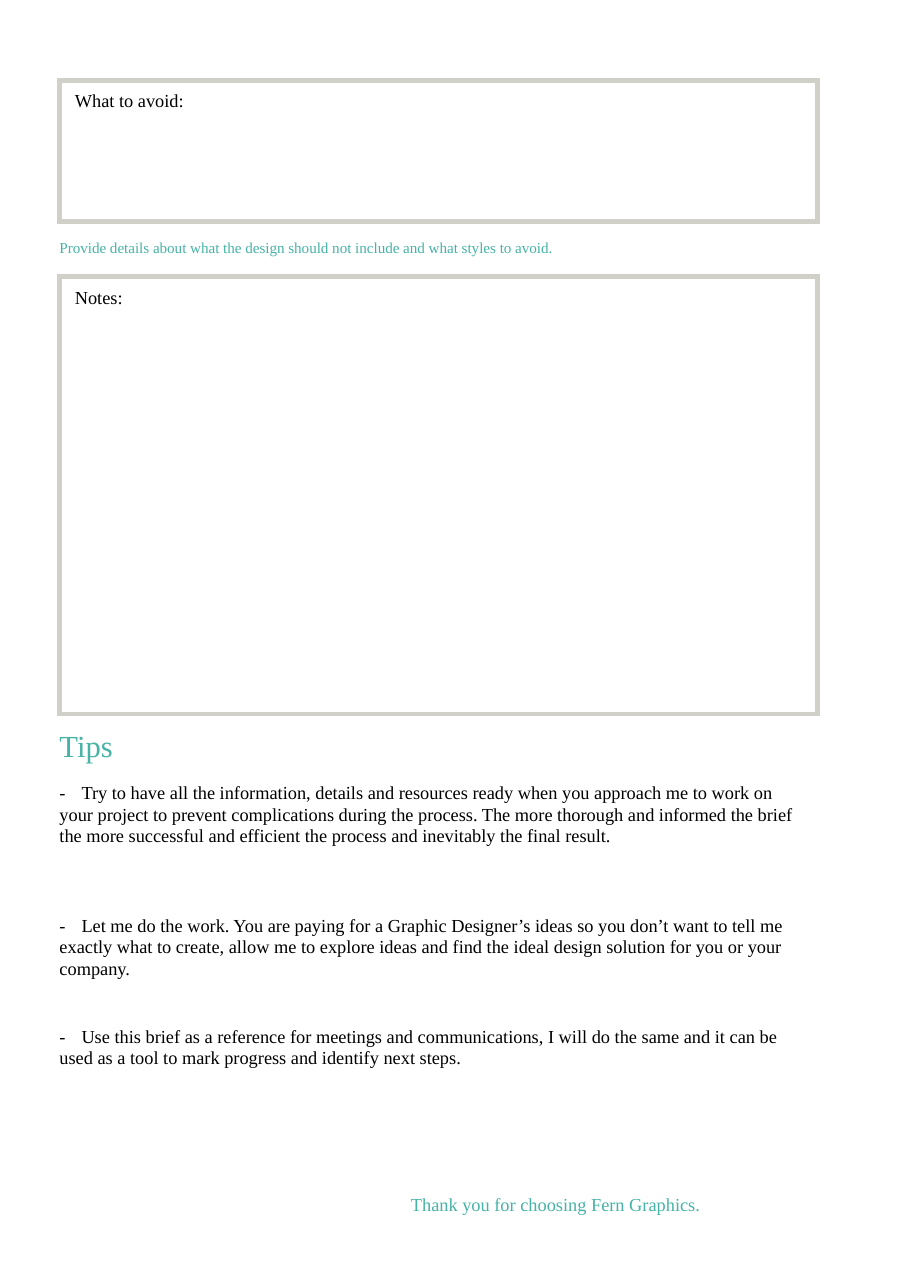
"""Build the closing page of a design brief: two answer boxes, tips and thanks."""
import pptx
import pptx.dml.color
import pptx.enum.shapes
import pptx.enum.text
import pptx.oxml.ns
import pptx.util
from lxml import etree

Inches, Pt = pptx.util.Inches, pptx.util.Pt
TEAL = pptx.dml.color.RGBColor(0x46, 0xB3, 0xA6)
GRAY = pptx.dml.color.RGBColor(0xD0, 0xD0, 0xC8)
BLACK = pptx.dml.color.RGBColor(0, 0, 0)
FONT = "Times New Roman"

TEXT_LEFT, TEXT_RIGHT = 0.54, 7.28
FRAME_LEFT, FRAME_RIGHT = 0.54, 7.42
OVERLAP = 0.02
LABEL_INDENT, LABEL_DROP = 0.14, 0.09
TAB_STOP = 0.2

FRAMES = [
    ("What to avoid:", 0.73, 2.01),
    ("Notes:", 2.51, 6.48),
]
LINES = [
    ("Provide details about what the design should not include and what styles to avoid.",
     TEXT_LEFT, 2.16, 9.9, 11.2),
    ("Tips", TEXT_LEFT, 6.62, 20, 21.4),
    ("Thank you for choosing Fern Graphics.", 3.73, 10.84, 12, 13.2),
]
TIPS = [
    ("Try to have all the information, details and resources ready when you approach me "
     "to work on your project to prevent complications during the process. The more "
     "thorough and informed the brief the more successful and efficient the process and "
     "inevitably the final result.", 7.09, 3),
    ("Let me do the work. You are paying for a Graphic Designer’s ideas so you don’t want "
     "to tell me exactly what to create, allow me to explore ideas and find the ideal "
     "design solution for you or your company.", 8.29, 3),
    ("Use this brief as a reference for meetings and communications, I will do the same "
     "and it can be used as a tool to mark progress and identify next steps.", 9.3, 2),
]
BODY_SIZE, TIP_SPACING, LABEL_SPACING = 12, 14, 13.2


def add_xml(parent, tag, **attributes):
    return etree.SubElement(parent, pptx.oxml.ns.qn(tag), attributes)


def add_text(slide, text, left, top, size, color, spacing, rows=1):
    height = rows * spacing / 72 + 0.02
    box = slide.shapes.add_textbox(
        Inches(left), Inches(top), Inches(TEXT_RIGHT - left), Inches(height))
    frame = box.text_frame
    frame.word_wrap = True
    frame.margin_left = frame.margin_right = frame.margin_bottom = 0
    frame.margin_top = Inches(0.01)
    paragraph = frame.paragraphs[0]
    paragraph.text = text
    paragraph.line_spacing = Pt(spacing)
    if "\t" in text:
        tabs = add_xml(paragraph._p.get_or_add_pPr(), "a:tabLst")
        add_xml(tabs, "a:tab", pos=str(Inches(TAB_STOP)), algn="l")
    paragraph.font.name = FONT
    paragraph.font.size = Pt(size)
    paragraph.font.color.rgb = color


def add_edge(slide, *ends):
    edge = slide.shapes.add_connector(
        pptx.enum.shapes.MSO_CONNECTOR.STRAIGHT, *map(Inches, ends))
    edge.line.color.rgb = GRAY
    edge.line.width = Pt(3)
    add_xml(edge._element.spPr, "a:effectLst")


def add_frame(slide, label, top, bottom):
    for x in (FRAME_LEFT, FRAME_RIGHT):
        add_edge(slide, x, top - OVERLAP, x, bottom + OVERLAP)
    for y in (top, bottom):
        add_edge(slide, FRAME_LEFT - OVERLAP, y, FRAME_RIGHT + OVERLAP, y)
    add_text(slide, label, FRAME_LEFT + LABEL_INDENT, top + LABEL_DROP,
             BODY_SIZE, BLACK, LABEL_SPACING)


def main():
    presentation = pptx.Presentation()
    presentation.slide_width = Inches(8.26)
    presentation.slide_height = Inches(11.69)
    slide = presentation.slides.add_slide(presentation.slide_layouts[6])
    for label, top, bottom in FRAMES:
        add_frame(slide, label, top, bottom)
    for text, left, top, size, spacing in LINES:
        add_text(slide, text, left, top, size, TEAL, spacing)
    for text, top, rows in TIPS:
        add_text(slide, "-\t" + text, TEXT_LEFT, top, BODY_SIZE, BLACK, TIP_SPACING, rows)
    presentation.save("out.pptx")


if __name__ == "__main__":
    main()
